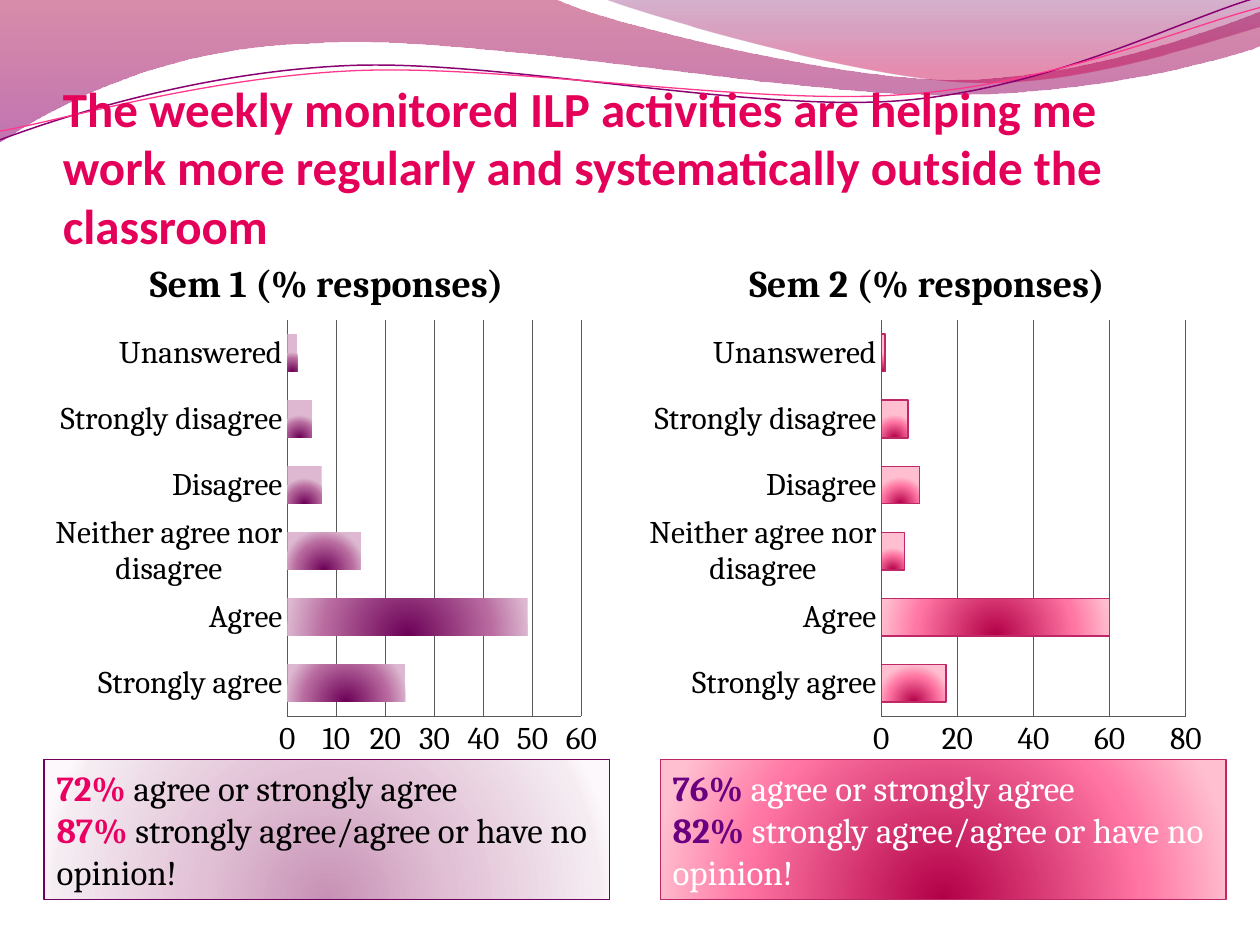
"""Build a slide comparing two semesters of survey responses."""
from dataclasses import dataclass
from math import cos, radians, sin

from pptx import Presentation
from pptx.chart.data import CategoryChartData
from pptx.dml.color import RGBColor
from pptx.enum.chart import XL_CHART_TYPE, XL_TICK_MARK
from pptx.enum.shapes import MSO_SHAPE
from pptx.enum.text import MSO_ANCHOR, MSO_AUTO_SIZE, PP_ALIGN
from pptx.oxml import parse_xml
from pptx.oxml.ns import nsdecls, qn
from pptx.util import Inches, Pt

COLUMNS, ROWS = 100, 75
LINEAR = '<a:lin ang="5400000" scaled="0"/>'
RADIAL = ('<a:path path="circle"><a:fillToRect l="50000" t="130000" '
          'r="50000" b="-30000"/></a:path>')


@dataclass(frozen=True)
class Theme:
    heading_font: str = "Calibri"
    body_font: str = "Cambria"
    heading_size: float = 28
    chart_size: float = 18
    summary_size: float = 20
    heading: str = "E40059"
    text: str = "000000"
    inverse: str = "FFFFFF"
    axis: str = "595959"
    plum: str = "73005E"
    rose: str = "BF2767"
    pink_accent: str = "E90062"
    violet_accent: str = "68007F"
    wave_violet: str = "8A0070"
    wave_pink: str = "FF388C"
    lower_wave: tuple = ((0, "A90042", 45), (100, "8E0073", 55))
    upper_wave: tuple = ((0, "73005E", 30), (80, "C9004F", 45))
    plum_bars: tuple = ((0, "6C0057", 100), (68, "B86A9F", 100), (100, "DDB8D0", 100))
    plum_panel: tuple = ((0, "C791B5", 100), (43, "E1C0D5", 100),
                         (93, "F5ECF2", 100), (100, "FDF8FB", 100))
    rose_glow: tuple = ((0, "B20047", 100), (68, "FF75A3", 100), (100, "FFBFD0", 100))


def rgb(value):
    return RGBColor.from_string(value)


def gradient(fill, owner, stops, direction):
    fill.gradient()
    blank = owner.find(".//" + qn("a:gradFill"))
    colours = "".join(
        f'<a:gs pos="{share * 1000}"><a:srgbClr val="{colour}">'
        f'<a:alpha val="{alpha * 1000}"/></a:srgbClr></a:gs>'
        for share, colour, alpha in stops)
    blank.getparent().replace(blank, parse_xml(
        f'<a:gradFill {nsdecls("a")} rotWithShape="1">'
        f'<a:gsLst>{colours}</a:gsLst>{direction}</a:gradFill>'))


def outline(line, colour, width=0.75):
    line.color.rgb = rgb(colour)
    line.width = Pt(width)


def style_font(font, name, size=None, colour=None, bold=None):
    font.name, font.bold = name, bold
    if size:
        font.size = Pt(size)
    if colour:
        font.color.rgb = rgb(colour)


def turn(point, centre, degrees):
    across, down = point[0] - centre[0], point[1] - centre[1]
    angle = radians(degrees)
    return (centre[0] + across * cos(angle) - down * sin(angle),
            centre[1] + across * sin(angle) + down * cos(angle))


def bend(outline_path, segments):
    """Merge each three points of a curved segment into one cubic curve."""
    corners = iter(outline_path.findall(qn("a:lnTo")))
    for segment in segments:
        legs = [next(corners) for _ in range(len(segment) // 2)]
        if len(legs) == 3:
            curve = parse_xml(f'<a:cubicBezTo {nsdecls("a")}/>')
            legs[0].addprevious(curve)
            for leg in legs:
                curve.append(leg[0])
                outline_path.remove(leg)


class SlideBuilder:
    """Draw themed elements on a slide measured in grid columns and rows."""

    def __init__(self, deck, theme):
        self.theme = theme
        self.column = deck.slide_width / COLUMNS
        self.row = deck.slide_height / ROWS
        self.shapes = deck.slides.add_slide(deck.slide_layouts[6]).shapes

    def area(self, left, top, width, height):
        return (round(left * self.column), round(top * self.row),
                round(width * self.column), round(height * self.row))

    def wave(self, start, segments, stops=None, line=None, width=0.75,
             centre=(50, 5), tilt=0):
        knots = [start] + [pair for segment in segments
                           for pair in zip(segment[::2], segment[1::2])]
        first, *rest = [(round(x * self.column), round(y * self.row))
                        for x, y in (turn(knot, centre, -tilt) for knot in knots)]
        pen = self.shapes.build_freeform(*first, scale=1.0)
        pen.add_line_segments(rest, close=bool(stops))
        ribbon = pen.convert_to_shape()
        bend(ribbon._element.find(".//" + qn("a:path")), segments)
        ribbon.rotation = tilt
        ribbon.shadow.inherit = False
        if stops:
            gradient(ribbon.fill, ribbon._element, stops, LINEAR)
            ribbon.line.fill.background()
        else:
            ribbon.fill.background()
            outline(ribbon.line, line, width)

    def heading(self, wording, *area):
        frame = self.shapes.add_textbox(*self.area(*area)).text_frame
        frame.word_wrap = True
        frame.vertical_anchor = MSO_ANCHOR.BOTTOM
        frame.margin_left = frame.margin_right = frame.margin_bottom = 0
        frame.text = wording
        style_font(frame.paragraphs[0].font, self.theme.heading_font,
                   self.theme.heading_size, self.theme.heading, True)

    def bars(self, title, responses, limit, step, stops, line, plot_area, *area):
        theme = self.theme
        data = CategoryChartData()
        data.categories = list(responses)
        data.add_series("Series 1", list(responses.values()))
        chart = self.shapes.add_chart(
            XL_CHART_TYPE.BAR_STACKED, *self.area(*area), data).chart
        style_font(chart.font, theme.body_font, theme.chart_size, theme.text)
        chart.has_legend = False
        chart.has_title = True
        chart.chart_title.include_in_layout = False
        chart.chart_title.text_frame.text = title
        style_font(chart.chart_title.text_frame.paragraphs[0].font, theme.body_font,
                   colour=theme.text, bold=True)
        values = chart.value_axis
        values.minimum_scale, values.maximum_scale, values.major_unit = 0, limit, step
        values.has_major_gridlines = True
        outline(values.major_gridlines.format.line, theme.axis)
        for axis in (chart.category_axis, values):
            axis.major_tick_mark = axis.minor_tick_mark = XL_TICK_MARK.NONE
            outline(axis.format.line, theme.axis)
        plot = chart.plots[0]
        plot.gap_width, plot.overlap, plot.vary_by_categories = 75, 100, False
        self.place_plot(chart, plot_area)
        series = plot.series[0]
        gradient(series.format.fill, series._element, stops, RADIAL)
        if line:
            outline(series.format.line, line)
        else:
            series.format.line.fill.background()

    def place_plot(self, chart, shares):
        plot_area = chart._chartSpace.find(".//" + qn("c:plotArea"))
        for automatic in plot_area.findall(qn("c:layout")):
            plot_area.remove(automatic)
        sides = "".join(f'<c:{side} val="{share}"/>'
                        for side, share in zip("xywh", shares))
        plot_area.insert(0, parse_xml(
            f'<c:layout {nsdecls("c")}><c:manualLayout><c:layoutTarget val="inner"/>'
            f'<c:xMode val="edge"/><c:yMode val="edge"/>{sides}'
            '</c:manualLayout></c:layout>'))

    def summary(self, findings, stops, line, accent, colour, *area):
        panel = self.shapes.add_shape(MSO_SHAPE.RECTANGLE, *self.area(*area))
        panel.shadow.inherit = False
        gradient(panel.fill, panel._element, stops, RADIAL)
        outline(panel.line, line)
        frame = panel.text_frame
        frame.word_wrap = True
        frame.auto_size = MSO_AUTO_SIZE.SHAPE_TO_FIT_TEXT
        for index, (share, finding) in enumerate(findings):
            paragraph = frame.add_paragraph() if index else frame.paragraphs[0]
            paragraph.alignment = PP_ALIGN.LEFT
            style_font(paragraph.font, self.theme.body_font, self.theme.summary_size)
            for wording, tint, bold in ((f"{share}% ", accent, True),
                                        (finding, colour, False)):
                run = paragraph.add_run()
                run.text, run.font.bold = wording, bold
                run.font.color.rgb = rgb(tint)


def main():
    deck = Presentation()
    deck.slide_width, deck.slide_height = Inches(10), Inches(7.5)
    theme = Theme()
    page = SlideBuilder(deck, theme)

    page.wave((0, 0), [(44, -0.1), (47.6, 1.7, 66.4, 6.3, 75.8, 6.3),
                       (85.3, 6.3, 95.8, 2.6, 100, 0.9), (100.1, 3.6),
                       (98.3, 4.4, 87, 7.6, 74.6, 7.5), (62.2, 7.5, 38.2, 2.8, 25.7, 3.4),
                       (12.9, 3.6, 4.6, 8.3, -0.1, 11.3), (0, 0)], theme.lower_wave)
    page.wave((47.9, -0.1), [(50.9, 1.1, 68.2, 6.2, 76.9, 6.5),
                             (85.6, 6.9, 96.1, 3.2, 100, 2.1), (100, 0), (47.9, -0.1)],
              theme.upper_wave)
    page.wave((0, 11.1), [(4.8, 9.3, 15.8, 5.7, 27.7, 5.2), (39.5, 4.7, 59.3, 8.9, 71.3, 8),
                          (83.3, 7.1, 93.8, 1.5, 99.8, -0.2)],
              line=theme.wave_violet, width=0.85, centre=(49.9, 5.75), tilt=-2.7)
    page.wave((0, 10.4), [(4.7, 9.6, 16.4, 6.1, 28.3, 5.6), (40.3, 5.1, 59.7, 8.4, 71.7, 7.5),
                          (83.6, 6.7, 94.1, 2.1, 100, 0.6)],
              line=theme.wave_pink, centre=(49.9, 5.9), tilt=-2.7)

    page.heading("The weekly monitored ILP activities are helping me work more regularly "
                 "and systematically outside the classroom", 5, 7.7, 90, 12.5)

    answers = ("Strongly agree", "Agree", "Neither agree nor disagree",
               "Disagree", "Strongly disagree", "Unanswered")
    page.bars("Sem 1 (% responses)", dict(zip(answers, (24, 49, 15, 7, 5, 2))), 60, 10,
              theme.plum_bars, None, (0.43, 0.16, 0.52, 0.74), 3.5, 18.6, 44.9, 42.5)
    page.bars("Sem 2 (% responses)", dict(zip(answers, (17, 60, 6, 10, 7, 1))), 80, 20,
              theme.rose_glow, theme.rose, (0.42, 0.16, 0.53, 0.74), 50.8, 18.6, 45.6, 42.5)

    findings = ("agree or strongly agree", "strongly agree/agree or have no opinion!")
    page.summary(zip((72, 87), findings), theme.plum_panel, theme.plum,
                 theme.pink_accent, theme.text, 3.5, 60.3, 44.9, 11.1)
    page.summary(zip((76, 82), findings), theme.rose_glow, theme.rose,
                 theme.violet_accent, theme.inverse, 52.4, 60.3, 44.9, 11.1)
    deck.save("out.pptx")


if __name__ == "__main__":
    main()
